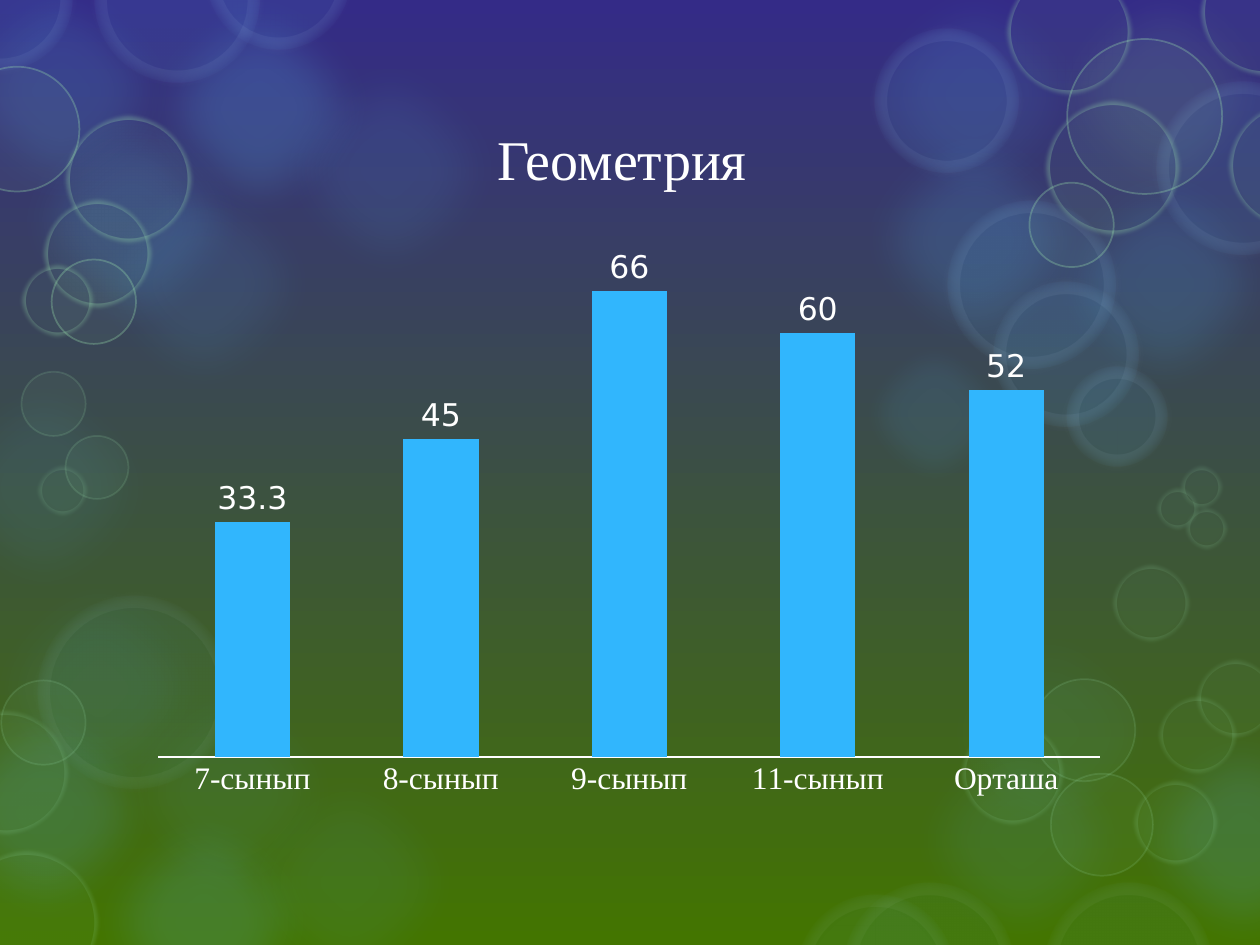
from dataclasses import dataclass

from lxml.etree import SubElement
from pptx import Presentation
from pptx.chart.data import CategoryChartData
from pptx.dml.color import RGBColor
from pptx.enum.chart import XL_CHART_TYPE, XL_LABEL_POSITION, XL_TICK_MARK
from pptx.enum.shapes import MSO_SHAPE
from pptx.enum.text import MSO_ANCHOR, PP_ALIGN
from pptx.oxml import parse_xml
from pptx.oxml.ns import nsdecls, qn
from pptx.util import Inches, Pt


@dataclass(frozen=True)
class Theme:
    sky: str = "342B87"
    grass: str = "437500"
    haze: str = "5BBAF6"
    mint: str = "9DE3AE"
    halo: str = "DDF1FD"
    bar: str = "31B6FD"
    text: str = "FFFFFF"
    title_font: str = "Times New Roman"
    number_font: str = "DejaVu Sans"
    title_size: int = 32
    chart_size: int = 18


THEME = Theme()
WIDTH, HEIGHT = 10, 7.5
# Shares of the slide's size
MARGIN, CONTENT_WIDTH = 0.11, 0.779

# Soft clouds: left, top, fill opacity
CLOUD_SIZE = 2.09
CLOUDS = [
    (-0.26, 4.42, 8), (0.57, 1.2, 10), (2.05, 0.31, 10), (0.57, 6.27, 16),
    (-0.56, -0.32, 14), (1.01, -0.18, 20), (0, 0.72, 15), (6.69, -0.29, 10),
    (8.2, 1.2, 15), (8.81, 5.62, 16), (7.29, 4.77, 5), (-0.69, 5.41, 16),
    (0.77, 5.24, 8), (6.69, 0.86, 15), (7.06, 5.62, 10), (1.73, 5.96, 8),
    (-0.7, 2.82, 8),
]
# Bubbles: left, top, diameter
BRIGHT_HALOS = [
    (9.18, 0.65, 1.37), (6.94, 0.23, 1.14), (7.52, 1.59, 1.33),
    (7.89, 2.24, 1.14), (8.47, 2.91, 0.79), (0.75, -0.66, 1.31),
    (1.64, -0.75, 1.14), (-0.57, -0.58, 1.14),
]
DIM_HALOS = [
    (0.3, 4.73, 1.53), (6.32, 7.1, 1.25), (6.7, 7.01, 1.35), (8.29, 7.01, 1.33),
]
BRIGHT_RINGS = [
    (-0.36, 0.53, 0.99), (0.41, 2.06, 0.67), (8.47, 0.31, 1.23), (8.17, 1.45, 0.67),
]
DIM_RINGS = [
    (0.01, 5.4, 0.67), (8.34, 6.14, 0.81), (8.2, 5.39, 0.81),
    (0.17, 2.95, 0.51), (0.52, 3.46, 0.5),
]
BRIGHT_BLURS = [
    (0.52, 0.92, 1), (0.35, 1.59, 0.85), (0.17, 2.1, 0.57), (7.99, -0.24, 0.99),
    (9.53, -0.4, 1), (9.75, 0.82, 0.99), (8.3, 0.8, 1.06),
]
DIM_BLURS = [
    (-0.35, 6.75, 1.13), (-0.44, 5.64, 0.98), (7.63, 5.73, 0.81), (9, 6.2, 0.66),
    (8.83, 4.48, 0.61), (9.2, 5.53, 0.61), (9.5, 5.24, 0.61), (9.37, 3.7, 0.33),
    (9.18, 3.87, 0.33), (9.41, 4.03, 0.33), (0.3, 3.7, 0.39),
]
# Bubbles, colour, fill opacity, line colour, line points, line opacity, blur
RING_GROUPS = [
    (BRIGHT_HALOS, THEME.haze, 10, THEME.halo, 14, 6, 0.09),
    (DIM_HALOS, THEME.haze, 6, THEME.halo, 14, 4, 0.09),
    (BRIGHT_RINGS, THEME.mint, 5, THEME.mint, 1, 30, 0),
    (DIM_RINGS, THEME.mint, 5, THEME.mint, 1, 15, 0),
    (BRIGHT_BLURS, THEME.mint, 5, THEME.mint, 5, 30, 0.04),
    (DIM_BLURS, THEME.mint, 5, THEME.mint, 5, 15, 0.04),
]

SCORES = {"7-сынып": 33.3, "8-сынып": 45, "9-сынып": 66, "11-сынып": 60, "Орташа": 52}


def rgb(code):
    return RGBColor.from_string(code)


def paint(fill, code, opacity=100):
    fill.solid()
    fill.fore_color.rgb = rgb(code)
    if opacity < 100:
        color = fill._xPr.find(qn("a:solidFill"))[0]
        SubElement(color, qn("a:alpha")).set("val", str(opacity * 1000))


def add_bubble(slide, place, color, opacity, rim=None, blur=0):
    left, top, size = map(Inches, place)
    bubble = slide.shapes.add_shape(MSO_SHAPE.OVAL, left, top, size, size)
    bubble.shadow.inherit = False
    paint(bubble.fill, color, opacity)
    if rim:
        rim_color, points, rim_opacity = rim
        bubble.line.width = Pt(points)
        paint(bubble.line.fill, rim_color, rim_opacity)
    else:
        bubble.line.fill.background()
    if blur:
        effects = bubble._element.spPr.find(qn("a:effectLst"))
        SubElement(effects, qn("a:softEdge")).set("rad", str(Inches(blur)))


def add_backdrop(slide):
    fill = slide.background.fill
    fill.gradient()
    fill.gradient_angle = 270
    for stop, code, position in zip(fill.gradient_stops, (THEME.sky, THEME.grass), (0, 1)):
        stop.color.rgb = rgb(code)
        stop.position = position
    for left, top, opacity in CLOUDS:
        add_bubble(slide, (left, top, CLOUD_SIZE), THEME.haze, opacity, blur=0.35)
    add_bubble(slide, (8.2, -0.32, CLOUD_SIZE), THEME.mint, 10, blur=0.35)
    add_bubble(slide, (6.75, 2.62, 1.33), THEME.haze, 10, blur=0.2)
    for places, color, opacity, rim_color, points, rim_opacity, blur in RING_GROUPS:
        for place in places:
            add_bubble(slide, place, color, opacity, (rim_color, points, rim_opacity), blur)


def content_box(top, height):
    return (Inches(MARGIN * WIDTH), Inches(top * HEIGHT),
            Inches(CONTENT_WIDTH * WIDTH), Inches(height * HEIGHT))


def style_font(font, name, size):
    font.name, font.size, font.bold = name, Pt(size), False
    font.color.rgb = rgb(THEME.text)


def add_title(slide, words):
    frame = slide.shapes.add_textbox(*content_box(0.1, 0.135)).text_frame
    frame.word_wrap = True
    frame.vertical_anchor = MSO_ANCHOR.MIDDLE
    heading = frame.paragraphs[0]
    heading.text = words
    heading.alignment = PP_ALIGN.CENTER
    style_font(heading.font, THEME.title_font, THEME.title_size)


def add_score_chart(slide):
    scores = CategoryChartData()
    scores.categories = list(SCORES)
    scores.add_series("Series 1", list(SCORES.values()))
    chart = slide.shapes.add_chart(
        XL_CHART_TYPE.COLUMN_CLUSTERED, *content_box(0.264, 0.59), scores).chart
    chart.has_legend = chart.has_title = False
    style_font(chart.font, THEME.number_font, THEME.chart_size)

    # Axes
    score_axis, class_axis = chart.value_axis, chart.category_axis
    score_axis.minimum_scale, score_axis.maximum_scale = 0, 70
    score_axis.has_major_gridlines = False
    score_axis.visible = False
    class_axis.major_tick_mark = XL_TICK_MARK.NONE
    class_axis.format.line.color.rgb = rgb(THEME.text)
    class_axis.format.line.width = Pt(1)
    style_font(class_axis.tick_labels.font, THEME.title_font, THEME.chart_size)

    # Bars and their values
    plot = chart.plots[0]
    plot.gap_width = 150
    plot.vary_by_categories = False
    paint(plot.series[0].format.fill, THEME.bar)
    plot.has_data_labels = True
    plot.data_labels.show_value = True
    plot.data_labels.position = XL_LABEL_POSITION.OUTSIDE_END
    style_font(plot.data_labels.font, THEME.number_font, THEME.chart_size)

    # Plot area as shares of the chart
    area = chart._chartSpace.chart.plotArea
    for old in area.findall(qn("c:layout")):
        area.remove(old)
    shares = {"x": 0.02, "y": 0.02, "w": 0.96, "h": 0.89}
    area.insert(0, parse_xml(
        f'<c:layout {nsdecls("c")}><c:manualLayout><c:layoutTarget val="inner"/>'
        '<c:xMode val="edge"/><c:yMode val="edge"/>'
        + "".join(f'<c:{side} val="{share}"/>' for side, share in shares.items())
        + "</c:manualLayout></c:layout>"))


def main():
    deck = Presentation()
    deck.slide_width, deck.slide_height = Inches(WIDTH), Inches(HEIGHT)
    slide = deck.slides.add_slide(deck.slide_layouts[6])
    add_backdrop(slide)
    add_title(slide, "Геометрия ")
    add_score_chart(slide)
    deck.save("out.pptx")


if __name__ == "__main__":
    main()
